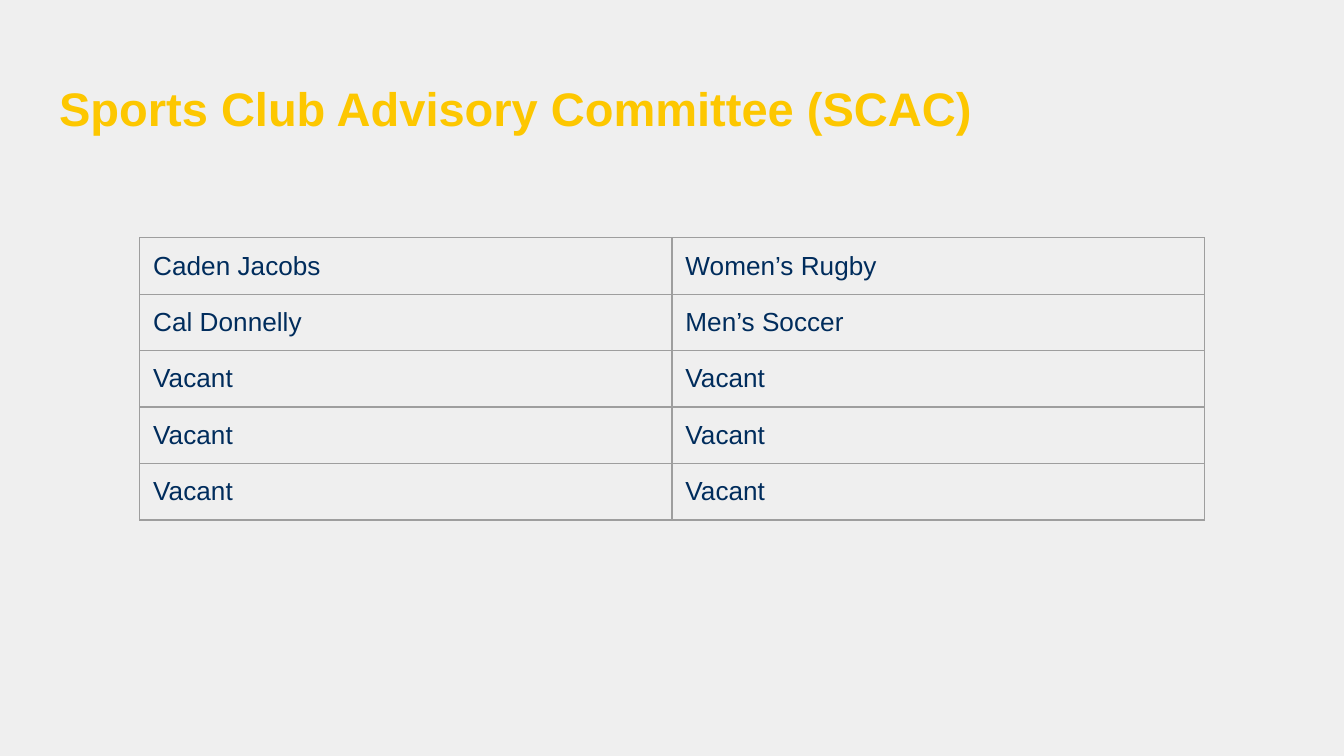
from dataclasses import dataclass
from typing import NamedTuple

from lxml import etree
from pptx import Presentation
from pptx.dml.color import RGBColor
from pptx.enum.text import MSO_ANCHOR, MSO_AUTO_SIZE, PP_ALIGN
from pptx.oxml.ns import qn
from pptx.util import Inches, Pt

LEFT = PP_ALIGN.LEFT
TOP, MIDDLE = MSO_ANCHOR.TOP, MSO_ANCHOR.MIDDLE
NO_AUTOFIT = MSO_AUTO_SIZE.NONE
TITLE_ONLY = 5


@dataclass(frozen=True)
class Theme:
    font: str = "Arial"
    background: str = "EFEFEF"
    title: str = "FDC700"
    text: str = "002C5C"
    border: str = "9E9E9E"
    title_size: float = 25.2
    text_size: float = 14
    border_width: float = 0.75
    inset: float = 0.1


class Member(NamedTuple):
    name: str
    club: str


THEME = Theme()
VACANT = Member("Vacant", "Vacant")
MEMBERS = [
    Member("Caden Jacobs", "Women’s Rugby"),
    Member("Cal Donnelly", "Men’s Soccer"),
    *[VACANT] * 3,
]


def set_margins(target) -> None:
    """Give a text frame or table cell the same inset on every side."""
    inset = Inches(THEME.inset)
    target.margin_left = target.margin_right = inset
    target.margin_top = target.margin_bottom = inset


def add_text(tf, text: str, size: float, color: str, bold: bool = False) -> None:
    p = tf.paragraphs[0]
    p.alignment = LEFT
    r = p.add_run()
    r.text = text
    r.font.name = THEME.font
    r.font.size = Pt(size)
    r.font.bold = bold
    r.font.color.rgb = RGBColor.from_string(color)


def add_borders(cell) -> None:
    """Insert the four border lines ahead of the cell fill."""
    tc_pr = cell._tc.get_or_add_tcPr()
    for i, side in enumerate(("lnL", "lnR", "lnT", "lnB")):
        ln = etree.Element(qn(f"a:{side}"), w=str(Pt(THEME.border_width)))
        fill = etree.SubElement(ln, qn("a:solidFill"))
        etree.SubElement(fill, qn("a:srgbClr"), val=THEME.border)
        tc_pr.insert(i, ln)


def add_title(s, text: str) -> None:
    title = s.shapes.title
    title.left, title.top = Inches(0.34), Inches(0.49)
    title.width, title.height = Inches(9.32), Inches(0.63)
    tf = title.text_frame
    tf.word_wrap = True
    tf.auto_size = NO_AUTOFIT
    tf.vertical_anchor = MIDDLE
    set_margins(tf)
    add_text(tf, text, THEME.title_size, THEME.title, bold=True)


def add_members(s, members: list[Member]) -> None:
    rows, cols = len(members), len(Member._fields)
    table = s.shapes.add_table(
        rows, cols, Inches(1.04), Inches(1.77),
        Inches(3.96 * cols), Inches(0.42 * rows),
    ).table
    table.first_row = table.horz_banding = False
    for row, member in zip(table.rows, members):
        for cell, text in zip(row.cells, member):
            cell.fill.background()
            cell.vertical_anchor = TOP
            set_margins(cell)
            add_borders(cell)
            add_text(cell.text_frame, text, THEME.text_size, THEME.text)


def main() -> None:
    # Widescreen 16:9 slide
    prs = Presentation()
    prs.slide_width = Inches(10)
    prs.slide_height = prs.slide_width * 9 // 16
    s = prs.slides.add_slide(prs.slide_layouts[TITLE_ONLY])

    # Background
    s.background.fill.solid()
    s.background.fill.fore_color.rgb = RGBColor.from_string(THEME.background)

    # Title and committee table
    add_title(s, "Sports Club Advisory Committee (SCAC)")
    add_members(s, MEMBERS)
    prs.save("out.pptx")


if __name__ == "__main__":
    main()
